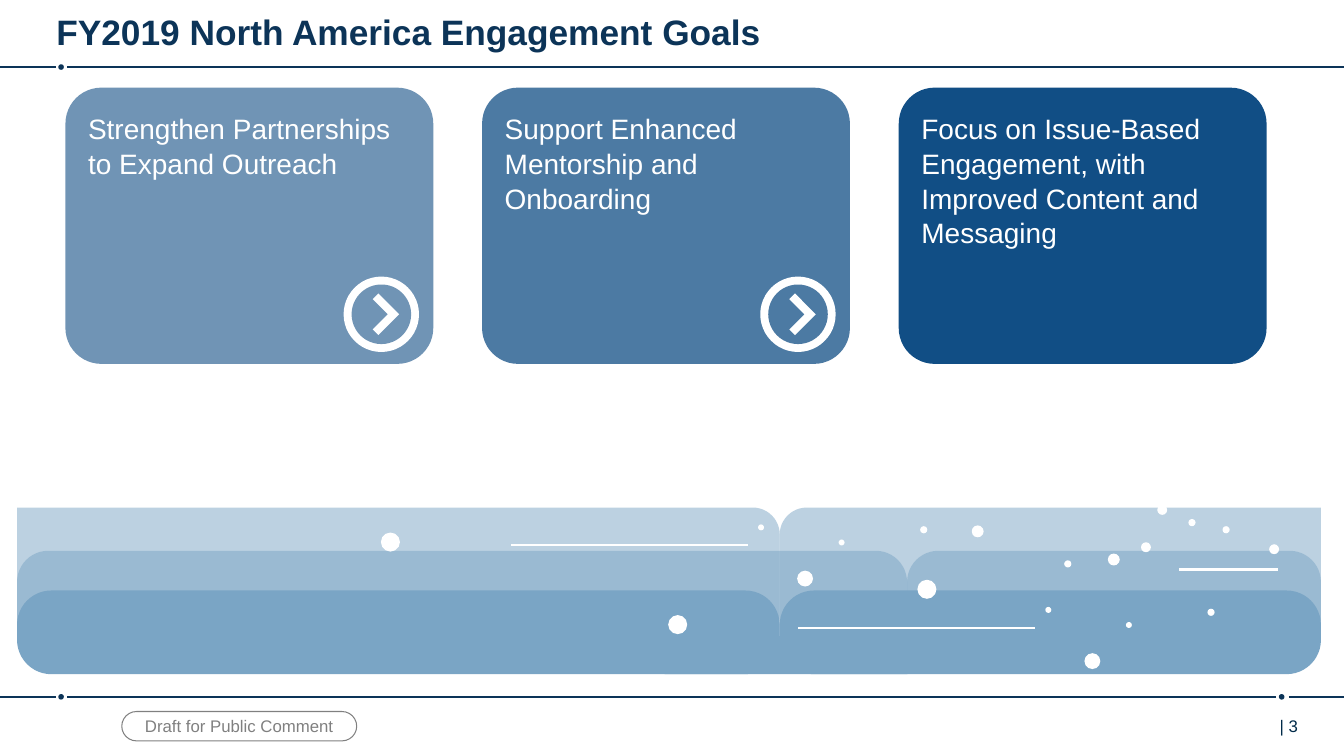
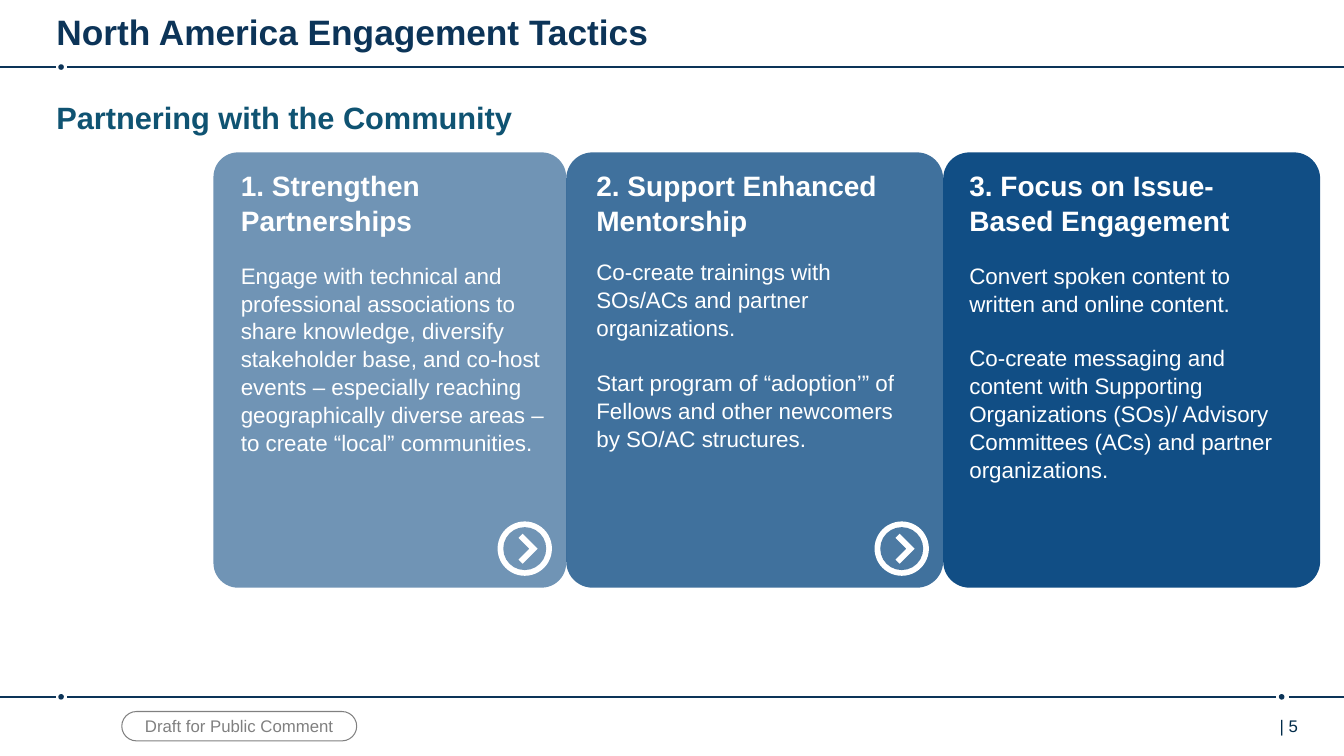
from dataclasses import dataclass

from lxml import etree
from pptx import Presentation
from pptx import util as u
from pptx.dml.color import RGBColor
from pptx.enum import shapes, text
from pptx.oxml.ns import qn


@dataclass(frozen=True)
class Theme:
    font: str = "Arial"
    navy: str = "0C3458"
    blue: str = "114E85"
    teal: str = "0F5372"
    wave: str = "7AA5C5"
    page: str = "002B49"
    grey: str = "808080"
    white: str = "FFFFFF"
    title: float = 25.2
    subtitle: float = 22
    heading: float = 20
    body: float = 16
    small: float = 12
    spacing: float = 1.04


T = Theme()
SHAPE = shapes.MSO_SHAPE
ANCHOR = text.MSO_ANCHOR
WIDTH, HEIGHT = 33.87, 19.05

DRAFT_LABEL = "Draft for Public Comment"

GOALS = [
    ("Strengthen Partnerships to Expand Outreach", 60),
    ("Support Enhanced Mentorship and Onboarding", 75),
    ("Focus on Issue-Based Engagement, with Improved Content and Messaging", 100),
]

TACTICS = [
    dict(
        heading="1. Strengthen Partnerships",
        body=["Engage with technical and professional associations to share knowledge, "
              "diversify stakeholder base, and co-host events – especially reaching "
              "geographically diverse areas – to create “local” communities."],
        gap=16.7, width=8.89, inset=0.69, text_width=7.72, alpha=60, arrow_alpha=60),
    dict(
        heading="2. Support Enhanced Mentorship",
        body=["Co-create trainings with SOs/ACs and partner organizations.",
              "Start program of “adoption’” of Fellows and other newcomers by SO/AC structures."],
        gap=14.4, width=9.5, inset=0.76, text_width=8.08, alpha=80, arrow_alpha=75),
    dict(
        heading="3. Focus on Issue-Based Engagement",
        body=["Convert spoken content to written and online content.",
              "Co-create messaging and content with Supporting Organizations (SOs)/ "
              "Advisory Committees (ACs) and partner organizations."],
        gap=16.7, width=9.5, inset=0.66, text_width=8.18, alpha=100, arrow_alpha=None),
]

WAVE_LEFT, WAVE_RIGHT = 0.43, 33.29
WAVE_LAYERS = [
    dict(top=12.79, height=3.4, split=19.65, radius=0.2, alpha=50, inner_ends_only=True),
    dict(top=13.88, height=2.46, split=22.86, radius=0.32, alpha=50, inner_ends_only=False),
    dict(top=14.88, height=2.11, split=19.65, radius=0.41, alpha=100, inner_ends_only=False),
]
WAVE_JOINT = (16.75, 16.03, 6.12, 0.96)

BUBBLES = [
    (32.11, 13.84, 0.25), (28.88, 13.79, 0.25), (29.29, 12.85, 0.25),
    (28.07, 14.1, 0.3), (24.64, 13.39, 0.3), (30.9, 13.35, 0.18),
    (30.04, 13.17, 0.18), (26.91, 14.21, 0.18), (23.36, 14.85, 0.48),
]
ECHOED_BUBBLES = [
    (30.52, 15.43, 0.18), (28.45, 15.75, 0.15), (26.42, 15.37, 0.15),
    (27.53, 16.66, 0.4), (17.08, 15.74, 0.48),
]
ECHO_X, ECHO_Y = -7.24, -2.08
STREAK = (29.72, 32.21, 14.35)
ECHOED_STREAK = (20.12, 26.09, 15.82)


def cm(*values):
    return [u.Cm(v) for v in values]


def rgb(color):
    return RGBColor.from_string(color)


def add_shape(slide, kind, box, fill, alpha=100, line=None, adj=(), rotation=0):
    sp = slide.shapes.add_shape(kind, *cm(*box))
    sp.shadow.inherit = False
    sp.rotation = rotation
    for i, value in enumerate(adj):
        sp.adjustments[i] = value
    sp.fill.solid()
    sp.fill.fore_color.rgb = rgb(fill)
    if alpha < 100:
        color = sp._element.spPr.find(qn("a:solidFill"))[0]
        etree.SubElement(color, qn("a:alpha")).set("val", str(alpha * 1000))
    if line:
        sp.line.color.rgb = rgb(line)
        sp.line.width = u.Pt(0.75)
    else:
        sp.line.fill.background()
    return sp


def add_dot(slide, x, y, size, color, alpha=100):
    add_shape(slide, SHAPE.OVAL, (x - size / 2, y - size / 2, size, size), color, alpha)


def add_rule(slide, x1, x2, y, color, width):
    line = slide.shapes.add_connector(shapes.MSO_CONNECTOR.STRAIGHT, *cm(x1, y, x2, y))
    line.line.color.rgb = rgb(color)
    line.line.width = u.Pt(width)
    etree.SubElement(line._element.spPr, qn("a:effectLst"))


def write(sp, paragraphs, color, size=T.body, bold=False, align=text.PP_ALIGN.LEFT,
          anchor=ANCHOR.TOP, insets=(0, 0, 0, 0), spacing=None):
    tf = sp.text_frame
    tf.word_wrap = True
    tf.vertical_anchor = anchor
    tf.margin_left, tf.margin_top, tf.margin_right, tf.margin_bottom = cm(*insets)
    for i, item in enumerate(paragraphs):
        p = tf.paragraphs[0] if i == 0 else tf.add_paragraph()
        p.alignment = align
        if spacing:
            p.line_spacing = spacing
        if item.get("before"):
            p.space_before = u.Pt(item["before"])
        r = p.add_run()
        r.text = item["text"]
        r.font.name = T.font
        r.font.size = u.Pt(item.get("size", size))
        r.font.bold = item.get("bold", bold)
        r.font.color.rgb = rgb(color)


def add_text(slide, box, content, **fmt):
    paragraphs = [dict(text=content)] if isinstance(content, str) else content
    write(slide.shapes.add_textbox(*cm(*box)), paragraphs, **fmt)


def add_frame(prs, title, number):
    slide = prs.slides.add_slide(prs.slide_layouts[6])
    title_y, footer_y = 1.69, 17.56
    rules = [(0, 1.4, title_y), (1.7, WIDTH, title_y), (0, 1.4, footer_y),
             (1.7, 32.16, footer_y), (32.48, WIDTH, footer_y)]
    for x1, x2, y in rules:
        add_rule(slide, x1, x2, y, T.navy, 1)
    for x, y in [(1.54, title_y), (1.54, footer_y), (32.3, footer_y)]:
        add_dot(slide, x, y, 0.14, T.navy)
    add_text(slide, (1.17, 0.13, 30.02, 1.24), title, color=T.navy, size=T.title, bold=True,
             anchor=ANCHOR.BOTTOM, insets=(0.25, 0, 0.25, 0.05))
    pill = add_shape(slide, SHAPE.ROUNDED_RECTANGLE, (3.07, 17.93, 5.92, 0.74), T.white,
                     line=T.grey, adj=[0.5])
    write(pill, [dict(text=DRAFT_LABEL)], color=T.grey, size=T.small,
          align=text.PP_ALIGN.CENTER, anchor=ANCHOR.MIDDLE)
    add_text(slide, (32.25, 17.91, 1.6, 1.02), f"| {number}", color=T.page, size=T.small,
             insets=(0, 0.13, 0, 0.13))
    return slide


def add_card(slide, box, radius, alpha):
    add_shape(slide, SHAPE.ROUNDED_RECTANGLE, box, T.blue, alpha, adj=[radius])


def add_corner(slide, box, thickness, rotation):
    sp = add_shape(slide, SHAPE.RECTANGLE, box, T.white, rotation=rotation)
    geometry = sp._element.spPr.find(qn("a:prstGeom"))
    geometry.set("prst", "corner")
    guides = geometry.find(qn("a:avLst"))
    for name in ("adj1", "adj2"):
        guide = etree.SubElement(guides, qn("a:gd"))
        guide.set("name", name)
        guide.set("fmla", f"val {round(thickness * 100000)}")


def add_arrow_badge(slide, card, size, alpha):
    left, top, width, height = card
    x = left + width - 0.36 - size / 2
    y = top + height - 0.3 - size / 2
    add_dot(slide, x, y, size, T.white)
    add_dot(slide, x, y, size * 0.79, T.blue, alpha)
    side = size * 0.39
    add_corner(slide, (x - size * 0.04 - side / 2, y - side / 2, side, side), 0.27, 225)


def add_wave(slide):
    for layer in WAVE_LAYERS:
        top, height, split = layer["top"], layer["height"], layer["split"]
        for left, right, turn in [(split, WAVE_RIGHT, 270), (WAVE_LEFT, split, 90)]:
            width = right - left
            box, kind, adj, rotation = (
                (left, top, width, height), SHAPE.ROUNDED_RECTANGLE, [layer["radius"]], 0)
            if layer["inner_ends_only"]:
                shift = (width - height) / 2
                box = (left + shift, top - shift, height, width)
                kind, adj, rotation = SHAPE.ROUND_2_SAME_RECTANGLE, [layer["radius"], 0], turn
            add_shape(slide, kind, box, T.wave, layer["alpha"], adj=adj, rotation=rotation)
    add_shape(slide, SHAPE.RECTANGLE, WAVE_JOINT, T.wave)

    echoes = [(x + ECHO_X, y + ECHO_Y, size) for x, y, size in ECHOED_BUBBLES]
    for x, y, size in BUBBLES + ECHOED_BUBBLES + echoes:
        add_dot(slide, x, y, size, T.white)
    x1, x2, y = ECHOED_STREAK
    for streak in [STREAK, ECHOED_STREAK, (x1 + ECHO_X, x2 + ECHO_X, y + ECHO_Y)]:
        add_rule(slide, *streak, T.white, 1.5)


def build_goals(prs):
    slide = add_frame(prs, "FY2019 North America Engagement Goals", 3)
    add_wave(slide)
    left, top, pitch = 1.65, 2.21, 10.5
    for i, (goal, alpha) in enumerate(GOALS):
        x = left + i * pitch
        card = (x, top, 9.27, 6.96)
        add_card(slide, card, 0.13, alpha)
        add_text(slide, (x + 0.57, top + 0.56, 7.95, 6.07), goal, color=T.white,
                 size=T.heading, spacing=T.spacing)
        if i < len(GOALS) - 1:
            add_arrow_badge(slide, card, 1.9, alpha)


def build_tactics(prs):
    slide = add_frame(prs, "North America Engagement Tactics", 5)
    add_text(slide, (1.17, 2.31, 15.24, 1.19), "Partnering with the Community", color=T.teal,
             size=T.subtitle, bold=True, spacing=T.spacing, insets=(0.25, 0.13, 0.25, 0.13))
    x, top = 5.38, 3.84
    for tactic in TACTICS:
        card = (x, top, tactic["width"], 10.97)
        add_card(slide, card, 0.07, tactic["alpha"])
        paragraphs = [dict(text=tactic["heading"], size=T.heading, bold=True)]
        for i, line in enumerate(tactic["body"]):
            paragraphs.append(dict(text=line, before=19.1 if i else tactic["gap"]))
        add_text(slide, (x + tactic["inset"], top + 0.38, tactic["text_width"], 9),
                 paragraphs, color=T.white, spacing=T.spacing)
        if tactic["arrow_alpha"]:
            add_arrow_badge(slide, card, 1.37, tactic["arrow_alpha"])
        x += tactic["width"]


def main():
    prs = Presentation()
    prs.slide_width, prs.slide_height = cm(WIDTH, HEIGHT)
    build_goals(prs)
    build_tactics(prs)
    prs.save("out.pptx")


if __name__ == "__main__":
    main()
